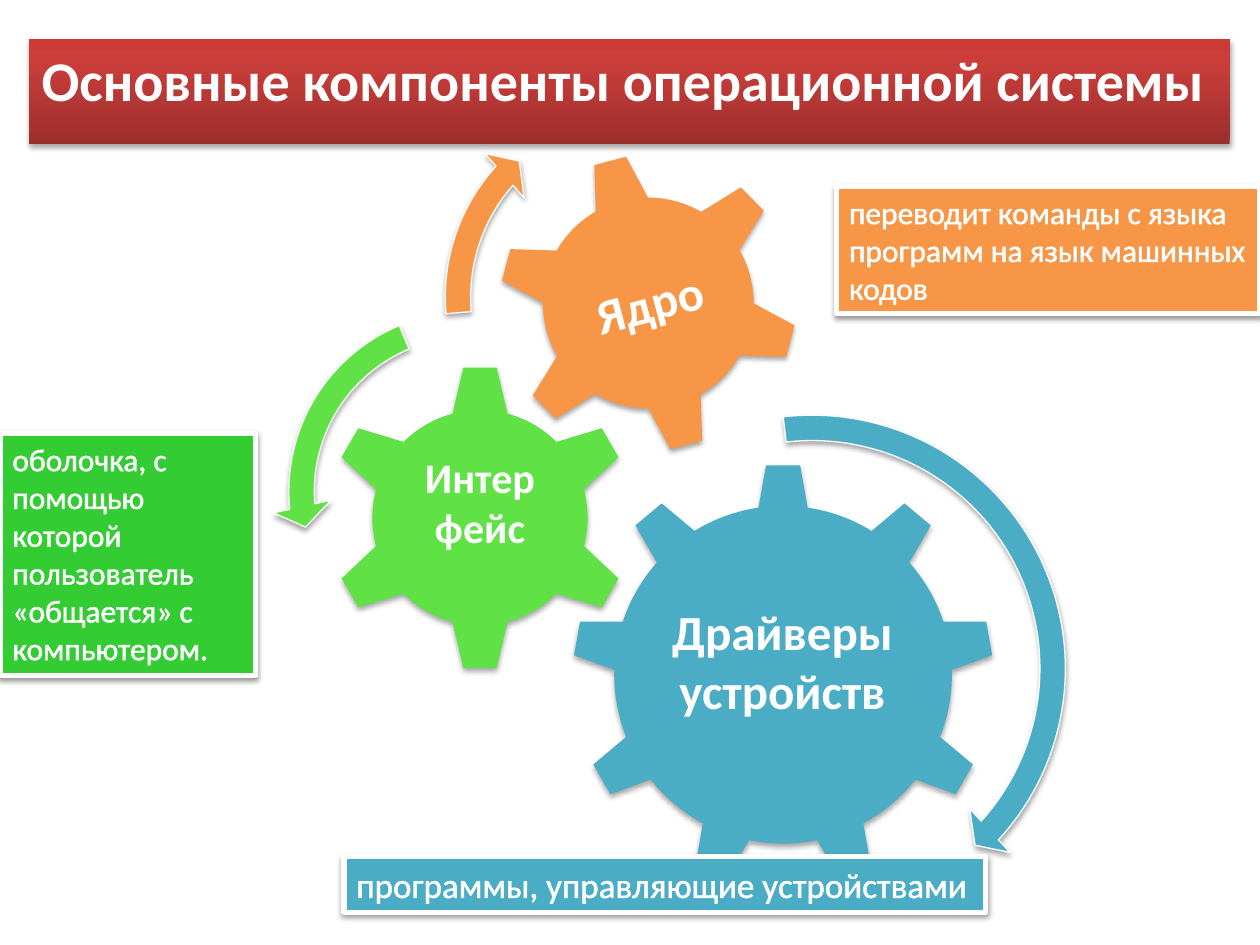
"""Build a slide showing the main components of an operating system as gears."""
from copy import deepcopy

from lxml.etree import SubElement
from pptx import Presentation
from pptx.dml.color import RGBColor
from pptx.enum.shapes import MSO_SHAPE
from pptx.enum.text import MSO_ANCHOR, MSO_AUTO_SIZE, PP_ALIGN
from pptx.oxml import parse_xml
from pptx.oxml.ns import nsdecls, qn
from pptx.util import Inches, Pt

COLORS = {
    "white": "FFFFFF",
    "kernel": "F79646",
    "interface": "60E146",
    "interface_note": "33CC33",
    "drivers": "4BACC6",
}
TITLE_GRADIENT = [(0, "9C2F2D"), (0.8, "CB3E3A"), (1, "CE3B37")]
TITLE_FORMAT = {"size": Pt(32), "bold": True}

GEARS = [
    (MSO_SHAPE.GEAR_9, "drivers", (4.54, 3.68, 3.35), 0),
    (MSO_SHAPE.GEAR_6, "interface", (2.59, 2.89, 2.44), 0),
    (MSO_SHAPE.GEAR_6, "kernel", (3.95, 1.21, 2.39), 345),
]
GEAR_LABELS = [
    (["Драйверы", "устройств"], (5.11, 4.64, 2.2, 1.2), 28, 0),
    (["Интер", "фейс"], (3.06, 3.48, 1.5, 1), 24, 0),
    (["Ядро"], (4.48, 1.73, 1.34, 1.34), 28, 345),
]
ARROWS = [
    (MSO_SHAPE.CIRCULAR_ARROW, "drivers", (4.3, 3.16, 4.29),
     (0.047, 2.99, 25.415, 158.077, 0.055)),
    (MSO_SHAPE.LEFT_CIRCULAR_ARROW, "interface", (2.16, 2.34, 3.12),
     (0.065, 4.3, 104.891, 148.378, 0.075)),
    (MSO_SHAPE.CIRCULAR_ARROW, "kernel", (3.4, 0.68, 3.36),
     (0.06, 3.941, 133.138, 105.082, 0.07)),
]
NOTES = [
    ("переводит команды с языка программ на язык машинных кодов",
     "kernel", (6.64, 1.48, 3.36, 1.01), 18, True),
    ("программы, управляющие устройствами",
     "drivers", (2.73, 6.8, 5.09, 0.44), 20, False),
    ("оболочка, с помощью которой пользователь «общается» с компьютером.",
     "interface_note", (0, 3.44, 2.03, 1.92), 18, True),
]


def add_shadow(shape, opacity=35, distance=1.8):
    """Give the shape a soft shadow that falls straight down."""
    shape.shadow.inherit = False
    effects = shape._element.spPr.find(qn("a:effectLst"))
    shadow = SubElement(effects, qn("a:outerShdw"), blurRad=str(Pt(3.1)),
                        dist=str(Pt(distance)), dir="5400000", rotWithShape="0")
    color = SubElement(shadow, qn("a:srgbClr"), val="000000")
    SubElement(color, qn("a:alpha"), val=str(opacity * 1000))


def write_paragraph(paragraph, text, formats, alignment=PP_ALIGN.LEFT):
    """Write one white run with the given font formats and return it."""
    paragraph.alignment = alignment
    run = paragraph.add_run()
    run.text = text
    for name, value in {"name": "Calibri", **formats}.items():
        setattr(run.font, name, value)
    run.font.color.rgb = RGBColor.from_string(COLORS["white"])
    return run


def format_frame(frame, formats):
    """Set the attributes of a text frame."""
    for name, value in formats.items():
        setattr(frame, name, value)


def add_solid_shape(slide, kind, box, color, line_width=None):
    """Add a filled preset shape with an optional white line."""
    shape = slide.shapes.add_shape(kind, *map(Inches, box))
    shape.fill.solid()
    shape.fill.fore_color.rgb = RGBColor.from_string(COLORS[color])
    if line_width is None:
        shape.line.fill.background()
    else:
        shape.line.color.rgb = RGBColor.from_string(COLORS["white"])
        shape.line.width = Pt(line_width)
    return shape


def format_title(title):
    """Turn the title placeholder into a red gradient banner."""
    geometry = {"left": 0.23, "top": 0.31, "width": 9.53, "height": 0.64}
    for name, value in geometry.items():
        setattr(title, name, Inches(value))
    title.fill.gradient()
    title.fill.gradient_angle = 90
    stop_list = title._element.spPr.find(qn("a:gradFill")).find(qn("a:gsLst"))
    stop_list.insert(1, deepcopy(stop_list[0]))
    for stop, (position, color) in zip(title.fill.gradient_stops, TITLE_GRADIENT):
        stop.position = position
        stop.color.rgb = RGBColor.from_string(color)
    add_shadow(title)
    format_frame(title.text_frame, {
        "word_wrap": False,
        "vertical_anchor": MSO_ANCHOR.TOP,
        "auto_size": MSO_AUTO_SIZE.SHAPE_TO_FIT_TEXT,
    })
    write_paragraph(title.text_frame.paragraphs[0],
                    "Основные компоненты операционной системы", TITLE_FORMAT)


def add_gear(slide, kind, color, place, rotation):
    """Add a square gear without a line."""
    left, top, size = place
    gear = add_solid_shape(slide, kind, (left, top, size, size), color)
    gear.rotation = rotation
    add_shadow(gear)


def add_gear_label(slide, lines, box, size, rotation):
    """Add a centred bold label, one paragraph a line."""
    label = slide.shapes.add_textbox(*map(Inches, box))
    label.rotation = rotation
    margins = ("margin_left", "margin_top", "margin_right", "margin_bottom")
    format_frame(label.text_frame, {
        "word_wrap": True,
        "vertical_anchor": MSO_ANCHOR.MIDDLE,
        **dict.fromkeys(margins, Inches(0.04)),
    })
    for index, line in enumerate(lines):
        frame = label.text_frame
        paragraph = frame.add_paragraph() if index else frame.paragraphs[0]
        write_paragraph(paragraph, line, {"size": Pt(size), "bold": True},
                        PP_ALIGN.CENTER)


def add_rotation_arrow(slide, kind, color, place, adjustments):
    """Add a curved arrow that shows how a gear turns."""
    left, top, size = place
    arrow = add_solid_shape(slide, kind, (left, top, size, size), color, 0.75)
    for index, value in enumerate(adjustments):
        arrow.adjustments[index] = value
    add_shadow(arrow)


def add_note(slide, text, color, box, size, wrap):
    """Add an explanation box with a white frame and outlined text."""
    note = add_solid_shape(slide, MSO_SHAPE.RECTANGLE, box, color, 3)
    add_shadow(note, opacity=38, distance=1.6)
    format_frame(note.text_frame, {
        "word_wrap": wrap,
        "vertical_anchor": MSO_ANCHOR.TOP,
        "auto_size": MSO_AUTO_SIZE.SHAPE_TO_FIT_TEXT,
    })
    run = write_paragraph(note.text_frame.paragraphs[0], text, {"size": Pt(size)})
    outline = parse_xml(
        f'<a:ln {nsdecls("a")} w="{Pt(1.45)}"><a:solidFill>'
        f'<a:srgbClr val="{COLORS["white"]}"/></a:solidFill></a:ln>')
    run.font._element.insert(0, outline)


def main():
    """Build and save the presentation."""
    presentation = Presentation()
    presentation.slide_width = Inches(10)
    presentation.slide_height = Inches(7.5)
    slide = presentation.slides.add_slide(presentation.slide_layouts[5])
    format_title(slide.shapes.title)
    for gear, label in zip(GEARS, GEAR_LABELS):
        add_gear(slide, *gear)
        add_gear_label(slide, *label)
    for arrow in ARROWS:
        add_rotation_arrow(slide, *arrow)
    for note in NOTES:
        add_note(slide, *note)
    presentation.save("out.pptx")


if __name__ == "__main__":
    main()
